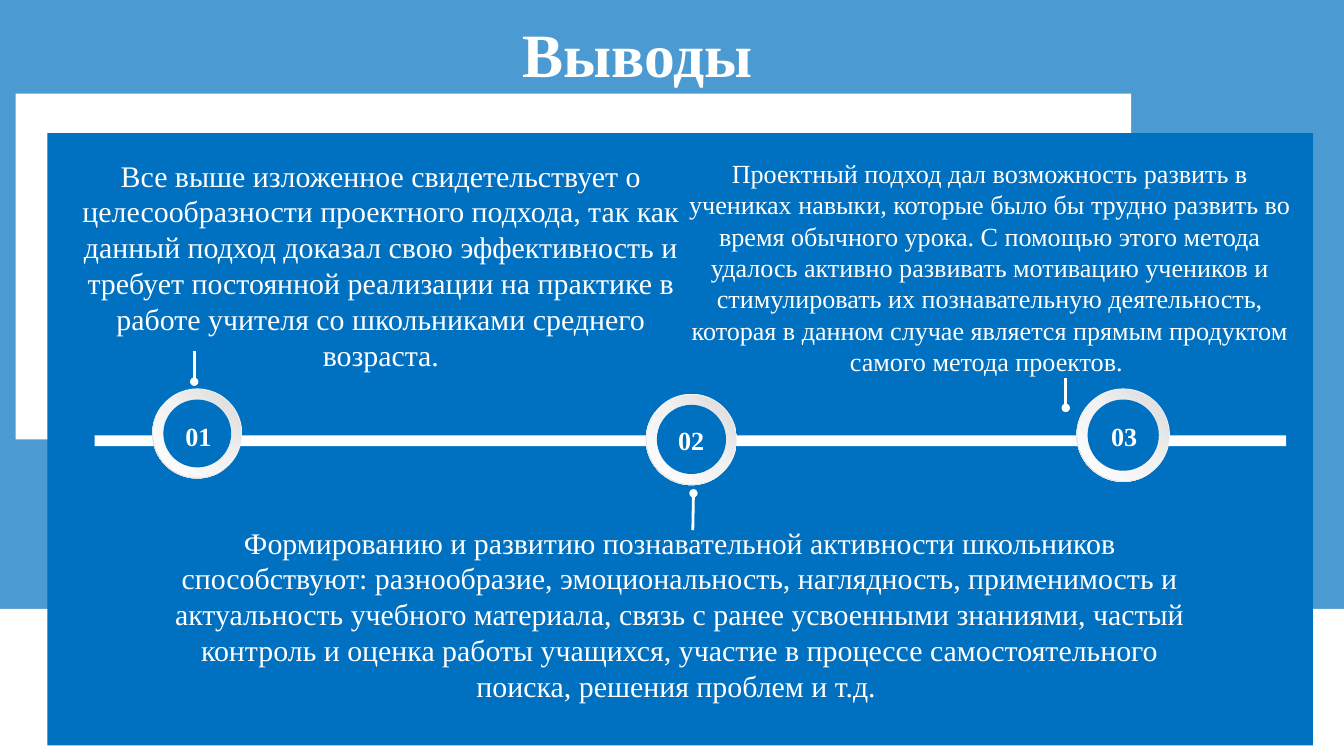
from dataclasses import dataclass
from typing import Optional

from lxml import etree
from pptx import Presentation
from pptx import util as u
from pptx.dml import color
from pptx.enum import shapes, text
from pptx.oxml import ns

HUES = {"white": "FFFFFF", "blue": "0070C0", "pale": "F2F2F2", "grey": "D9D9D9"}
FONT = "Times New Roman"
KIND = shapes.MSO_SHAPE
LEFT, MID = text.PP_ALIGN.LEFT, text.PP_ALIGN.CENTER


@dataclass
class Box:
    x: float
    y: float
    w: float
    h: float


@dataclass
class Note:
    words: str
    box: Box
    size: float
    bold: bool = False
    align: text.PP_ALIGN = MID
    pad: tuple[float, float] = (10.1, 5)


@dataclass
class Ring:
    x: float
    y: float
    d: float
    label: Note


@dataclass
class Pin:
    x: float
    y: float
    tox: float
    toy: float


@dataclass
class Fade:
    stops: list[tuple[int, str]]
    angle: int


RIM = Fade([(0, "pale"), (55, "pale"), (100, "grey")], 135)
DISC = Fade([(0, "white"), (51, "pale"), (100, "grey")], 315)


def rgb(hue: str) -> color.RGBColor:
    return color.RGBColor.from_string(HUES[hue])


def draw(slide, kind: KIND, box: Box, hue: Optional[str] = None):
    shape = slide.shapes.add_shape(kind, *map(u.Pt, (box.x, box.y, box.w, box.h)))
    shape.shadow.inherit = False
    shape.line.fill.background()
    if hue:
        shape.fill.solid()
        shape.fill.fore_color.rgb = rgb(hue)
    return shape


def blend(shape, fade: Fade) -> None:
    shape.fill.gradient()
    shape.fill.gradient_angle = 360 - fade.angle
    stops = shape._element.spPr.find(".//" + ns.qn("a:gsLst"))
    for old in list(stops):
        stops.remove(old)
    for pos, hue in fade.stops:
        stop = etree.SubElement(stops, ns.qn("a:gs"), pos=str(pos * 1000))
        etree.SubElement(stop, ns.qn("a:srgbClr"), val=HUES[hue])


def write(slide, note: Note) -> None:
    box = note.box
    frame = slide.shapes.add_textbox(*map(u.Pt, (box.x, box.y, box.w, box.h))).text_frame
    frame.word_wrap = True
    frame.auto_size = text.MSO_AUTO_SIZE.SHAPE_TO_FIT_TEXT
    frame.margin_left = frame.margin_right = u.Pt(note.pad[0])
    frame.margin_top = frame.margin_bottom = u.Pt(note.pad[1])
    para = frame.paragraphs[0]
    para.text = note.words
    para.alignment = note.align
    para.font.name = FONT
    para.font.size = u.Pt(note.size)
    para.font.bold = note.bold
    para.font.color.rgb = rgb("white")


def inset(ring: Ring, gap: float) -> Box:
    side = ring.d - 2 * gap
    return Box(ring.x + gap, ring.y + gap, side, side)


def circle(slide, ring: Ring) -> None:
    rim = draw(slide, KIND.DONUT, inset(ring, 0))
    rim.adjustments[0] = 0.049
    blend(rim, RIM)
    blend(draw(slide, KIND.OVAL, inset(ring, 1.3)), DISC)
    draw(slide, KIND.OVAL, inset(ring, 11.9), "blue")
    write(slide, ring.label)


def link(slide, pin: Pin) -> None:
    line = slide.shapes.add_connector(
        shapes.MSO_CONNECTOR.STRAIGHT, *map(u.Pt, (pin.x, pin.y, pin.tox, pin.toy)))
    line.line.color.rgb = rgb("white")
    line.line.width = u.Pt(3)
    etree.SubElement(line.line._get_or_add_ln(), ns.qn("a:headEnd"), type="oval")
    etree.SubElement(line._element.spPr, ns.qn("a:effectLst"))


def label(words: str, x: float, y: float, w: float, align: text.PP_ALIGN) -> Note:
    return Note(words, Box(x, y, w, 49.7), 28, True, align, (15.1, 7.9))


PANELS = [
    (Box(0, 652.3, 1440, 157.7), "white"),
    (Box(16.9, 100.4, 1195.2, 370.5), "white"),
    (Box(50.8, 142.6, 1355.8, 655.9), "blue"),
    (Box(101.5, 466.6, 1276.6, 11.5), "white"),
]
RINGS = [
    Ring(163.1, 416.2, 96.5, label("01", 183.6, 442.1, 62.6, LEFT)),
    Ring(691.9, 421.9, 97.9, label("02", 711.4, 447.1, 62.6, LEFT)),
    Ring(1153.4, 416.2, 100.1, label("03", 1167.1, 442.8, 74.9, MID)),
]
NOTES = [
    Note("Выводы ", Box(180, 16.6, 1023.8, 79.9), 66, True, pad=(0, 0)),
    Note("Все выше изложенное свидетельствует о целесообразности проектного подхода, "
         "так как данный подход доказал свою эффективность и требует постоянной "
         "реализации на практике в работе учителя со школьниками среднего возраста.",
         Box(73.4, 163.4, 669.6, 272.2), 32),
    Note("Формированию и развитию познавательной активности школьников способствуют: "
         "разнообразие, эмоциональность, наглядность, применимость и актуальность "
         "учебного материала, связь с ранее усвоенными знаниями, частый контроль и "
         "оценка работы учащихся, участие в процессе самостоятельного поиска, "
         "решения проблем и т.д. ",
         Box(151.9, 556.6, 1153.4, 233.3), 32),
    Note("Проектный подход дал возможность развить в учениках навыки, которые было бы "
         "трудно развить во время обычного урока. С помощью этого метода удалось "
         "активно развивать мотивацию учеников и стимулировать их познавательную "
         "деятельность, которая в данном случае является прямым продуктом самого "
         "метода проектов. ",
         Box(720, 163.4, 680.4, 276.5), 28),
]
PINS = [
    Pin(743, 528.5, 742.3, 568.1),
    Pin(208.1, 409, 208.1, 376.6),
    Pin(1141.9, 437, 1141.9, 404.6),
]


def main() -> None:
    deck = Presentation()
    deck.slide_width, deck.slide_height = u.Pt(1440), u.Pt(810)
    slide = deck.slides.add_slide(deck.slide_layouts[6])
    back = draw(slide, KIND.RECTANGLE, Box(0, 0, 1440, 652.3), "blue")
    tint = back._element.spPr.find(".//" + ns.qn("a:srgbClr"))
    etree.SubElement(tint, ns.qn("a:alpha"), val="70000")
    for box, hue in PANELS:
        draw(slide, KIND.RECTANGLE, box, hue)
    for ring in RINGS:
        circle(slide, ring)
    for note in NOTES:
        write(slide, note)
    for pin in PINS:
        link(slide, pin)
    deck.save("out.pptx")


if __name__ == "__main__":
    main()
